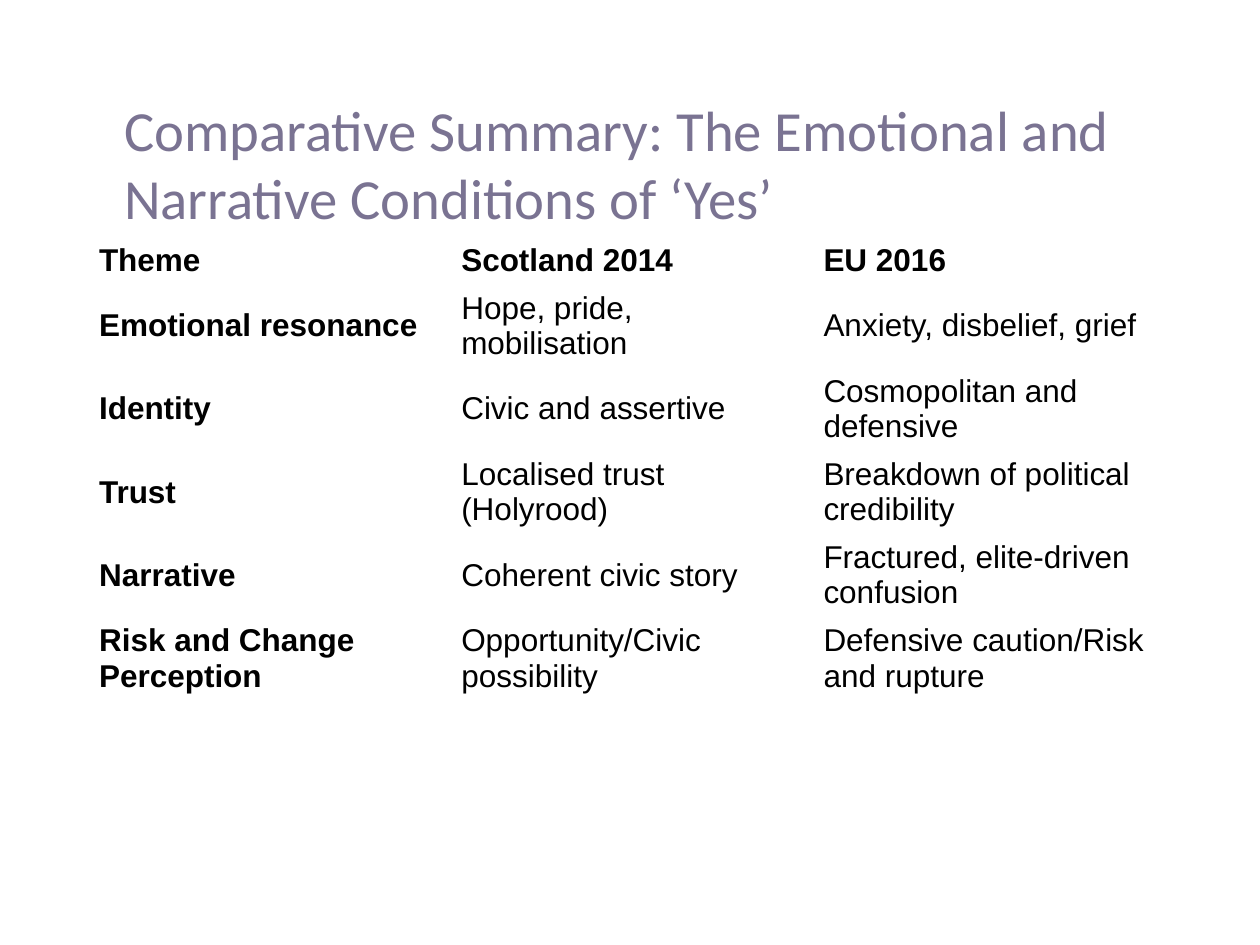
from pptx import Presentation
from pptx.dml.color import RGBColor
from pptx.enum.text import MSO_ANCHOR
from pptx.util import Pt

TITLE = "Comparative Summary: The Emotional and Narrative Conditions of ‘Yes’"
COMPARISON = [
    ("Theme", "Scotland 2014", "EU 2016"),
    ("Emotional resonance", "Hope, pride, mobilisation", "Anxiety, disbelief, grief"),
    ("Identity", "Civic and assertive", "Cosmopolitan and defensive"),
    ("Trust", "Localised trust (Holyrood)", "Breakdown of political credibility"),
    ("Narrative", "Coherent civic story", "Fractured, elite-driven confusion"),
    ("Risk and Change Perception", "Opportunity/Civic possibility",
     "Defensive caution/Risk and rupture"),
]
THEME = {
    "title": {"font": "Calibri", "size": 32.4, "color": "7A7392"},
    "body": {"font": "Arial", "size": 18, "color": "000000"},
}
TABLE_LEFT, TABLE_TOP = 49.4, 135.2
COLUMN_WIDTH = 207
HEADER_HEIGHT, ROW_HEIGHT = 27.2, 47.55
CELL_MARGIN = 1.5


def add_run(paragraph, text, style, bold=False):
    run = paragraph.add_run()
    run.text = text
    run.font.name = style["font"]
    run.font.size = Pt(style["size"])
    run.font.bold = bold
    run.font.color.rgb = RGBColor.from_string(style["color"])


def add_title(slide):
    frame = slide.shapes.add_textbox(Pt(71), Pt(53), Pt(620.6), Pt(80)).text_frame
    frame.margin_left = frame.margin_right = frame.margin_top = frame.margin_bottom = 0
    frame.word_wrap = True
    frame.vertical_anchor = MSO_ANCHOR.MIDDLE
    add_run(frame.paragraphs[0], TITLE, THEME["title"])


def add_comparison(slide):
    heights = [HEADER_HEIGHT] + [ROW_HEIGHT] * (len(COMPARISON) - 1)
    columns = len(COMPARISON[0])
    table = slide.shapes.add_table(
        len(COMPARISON), columns, Pt(TABLE_LEFT), Pt(TABLE_TOP),
        Pt(COLUMN_WIDTH * columns), Pt(sum(heights))).table
    table.first_row = table.horz_banding = False
    for column in table.columns:
        column.width = Pt(COLUMN_WIDTH)
    for r, (entries, height) in enumerate(zip(COMPARISON, heights)):
        table.rows[r].height = Pt(height)
        for c, entry in enumerate(entries):
            cell = table.cell(r, c)
            cell.fill.background()
            cell.margin_top = cell.margin_bottom = Pt(CELL_MARGIN)
            cell.vertical_anchor = MSO_ANCHOR.MIDDLE
            add_run(cell.text_frame.paragraphs[0], entry, THEME["body"],
                    bold=r == 0 or c == 0)


def main():
    deck = Presentation()
    deck.slide_width, deck.slide_height = Pt(720), Pt(540)
    slide = deck.slides.add_slide(deck.slide_layouts[6])
    add_title(slide)
    add_comparison(slide)
    deck.save("out.pptx")


if __name__ == "__main__":
    main()
